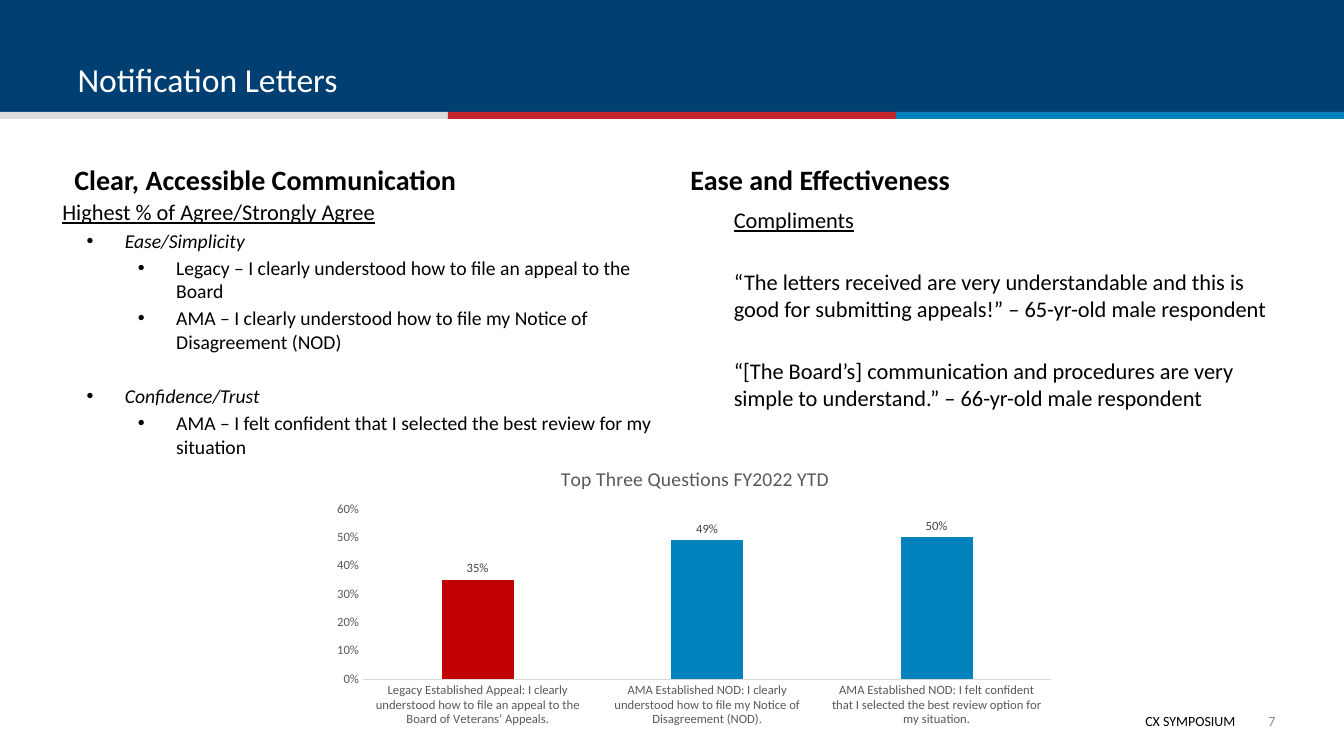
from lxml.etree import SubElement
from pptx import Presentation
from pptx.chart.data import CategoryChartData
from pptx.dml.color import RGBColor
from pptx.enum.chart import XL_CHART_TYPE, XL_LABEL_POSITION, XL_TICK_MARK
from pptx.enum.shapes import MSO_SHAPE
from pptx.enum.text import MSO_ANCHOR, PP_ALIGN
from pptx.oxml import parse_xml
from pptx.oxml.ns import nsdecls, qn
from pptx.util import Inches, Pt

COLOURS = {
    "navy": "003F72", "silver": "DBDCDE", "red": "C6262D", "blue": "0082BD",
    "crimson": "C00000", "black": "000000", "white": "FFFFFF", "number": "8C8C8C",
    "axis": "595959", "label": "404040", "rule": "D9D9D9",
}
RGB = {name: RGBColor.from_string(value) for name, value in COLOURS.items()}

presentation = Presentation()
presentation.slide_width = Inches(13.33)
presentation.slide_height = Inches(7.5)
slide = presentation.slides.add_slide(presentation.slide_layouts[6])


def share(left, top, width, height):
    across = presentation.slide_width / 100
    down = presentation.slide_height / 100
    return [int(length) for length in (left * across, top * down, width * across, height * down)]


def add_text(place, paragraphs, colour="black", inset=None, align=PP_ALIGN.LEFT, anchor=MSO_ANCHOR.TOP):
    frame = slide.shapes.add_textbox(*share(*place)).text_frame
    frame.word_wrap = True
    frame.vertical_anchor = anchor
    if inset is not None:
        for side in ("left", "top", "right", "bottom"):
            setattr(frame, f"margin_{side}", Inches(inset))
    for index, (text, indent, before, formats) in enumerate(paragraphs):
        paragraph = frame.add_paragraph() if index else frame.paragraphs[0]
        paragraph.alignment = align
        paragraph.space_before = Pt(before)
        run = paragraph.add_run()
        run.text = text
        for name, value in {"name": "Calibri", **formats}.items():
            setattr(run.font, name, value)
        run.font.color.rgb = RGB[colour]
        if indent:
            properties = paragraph._p.get_or_add_pPr()
            properties.set("marL", str(Inches(indent)))
            properties.set("indent", str(Inches(-0.38)))
            SubElement(properties, qn("a:buFont")).set("typeface", "Arial")
            SubElement(properties, qn("a:buChar")).set("char", "•")


third = 100 / 3
bands = [("navy", (0, 0, 100, 15.2))]
bands += [(colour, (column * third, 14.8, third, 0.93)) for column, colour in enumerate(("silver", "red", "blue"))]
for colour, place in bands:
    band = slide.shapes.add_shape(MSO_SHAPE.RECTANGLE, *share(*place))
    band.shadow.inherit = False
    band.fill.solid()
    band.fill.fore_color.rgb = RGB[colour]
    band.line.fill.background()

small = {"size": Pt(10)}
item = {"size": Pt(14)}
topic = {"size": Pt(14), "italic": True}
quote = {"size": Pt(16)}
lead = {"size": Pt(16), "underline": True}
heading = {"size": Pt(20), "bold": True}

add_text((5.03, 1.87, 90.02, 11.87), [("Notification Letters", 0, 0, {"size": Pt(24)})],
         colour="white", anchor=MSO_ANCHOR.BOTTOM)
for left, text in ((4.8, "Clear, Accessible Communication"), (50.64, "Ease and Effectiveness")):
    add_text((left, 17.33, 44.19, 9.33), [(text, 0, 4, heading)], anchor=MSO_ANCHOR.BOTTOM)

add_text((3.9, 25.6, 47.56, 64.8), [
    ("Highest % of Agree/Strongly Agree", 0, 2, lead),
    ("Ease/Simplicity", 0.62, 2.4, topic),
    ("Legacy – I clearly understood how to file an appeal to the Board", 1.13, 2.4, item),
    ("AMA – I clearly understood how to file my Notice of Disagreement (NOD)", 1.13, 2.4, item),
    ("Confidence/Trust", 0.62, 22.2, topic),
    ("AMA – I felt confident that I selected the best review for my situation", 1.13, 2.4, item),
])
add_text((53.86, 26.67, 41.26, 64.8), [
    ("Compliments", 0, 2, lead),
    ("“The letters received are very understandable and this is good for submitting appeals!”"
     " – 65-yr-old male respondent", 0, 25, quote),
    ("“[The Board’s] communication and procedures are very simple to understand.”"
     " – 66-yr-old male respondent", 0, 25, quote),
])
add_text((41.34, 93.6, 51.31, 3.6), [("CX SYMPOSIUM", 0, 0, small)], align=PP_ALIGN.RIGHT)
add_text((92.2, 92.67, 2.7, 5.33), [("7", 0, 0, small)], colour="number", inset=0,
         align=PP_ALIGN.RIGHT, anchor=MSO_ANCHOR.MIDDLE)

questions = CategoryChartData(number_format="0%")
questions.categories = [
    "Legacy Established Appeal: I clearly understood how to file an appeal to the Board of Veterans’ Appeals.",
    "AMA Established NOD: I clearly understood how to file my Notice of Disagreement (NOD).",
    "AMA Established NOD: I felt confident that I selected the best review option for my situation.",
]
questions.add_series("Series 1", (0.35, 0.49, 0.5))
chart = slide.shapes.add_chart(
    XL_CHART_TYPE.COLUMN_CLUSTERED, *share(24.01, 59.6, 55.44, 37.33), questions).chart
chart.has_legend = False
chart.has_title = True
chart.chart_title.include_in_layout = False
chart.chart_title.text_frame.text = "Top Three Questions FY2022 YTD"
title_font = chart.chart_title.text_frame.paragraphs[0].runs[0].font

plot = chart.plots[0]
plot.vary_by_categories = False
plot.gap_width = 219
plot.overlap = -27
plot.has_data_labels = True
labels = plot.data_labels
for name, value in {"show_value": True, "number_format": "0%", "number_format_is_linked": False,
                    "position": XL_LABEL_POSITION.OUTSIDE_END}.items():
    setattr(labels, name, value)

bars = plot.series[0]
for part, colour in ((bars, "blue"), (bars.points[0], "crimson")):
    part.format.fill.solid()
    part.format.fill.fore_color.rgb = RGB[colour]

for axis in (chart.category_axis, chart.value_axis):
    axis.major_tick_mark = axis.minor_tick_mark = XL_TICK_MARK.NONE
    axis.has_major_gridlines = False
chart.category_axis.format.line.color.rgb = RGB["rule"]
chart.category_axis.format.line.width = Pt(0.75)
value_axis = chart.value_axis
value_axis.format.line.fill.background()
for name, value in {"minimum_scale": 0, "maximum_scale": 0.6, "major_unit": 0.1}.items():
    setattr(value_axis, name, value)
value_axis.tick_labels.number_format = "0%"
value_axis.tick_labels.number_format_is_linked = False

for font, size, colour in (
    (chart.font, 10, "black"), (title_font, 14, "axis"), (labels.font, 9, "label"),
    (chart.category_axis.tick_labels.font, 9, "axis"), (value_axis.tick_labels.font, 9, "axis"),
):
    for name, value in {"name": "Calibri", "size": Pt(size), "bold": False}.items():
        setattr(font, name, value)
    font.color.rgb = RGB[colour]

plot_area = chart._chartSpace.chart.plotArea
for layout in plot_area.findall(qn("c:layout")):
    plot_area.remove(layout)
edges = {"xMode": "edge", "yMode": "edge", "x": 0.054, "y": 0.207, "w": 0.924, "h": 0.603}
settings = "".join(f'<c:{name} val="{value}"/>' for name, value in edges.items())
plot_area.insert(0, parse_xml(
    f'<c:layout {nsdecls("c")}><c:manualLayout><c:layoutTarget val="inner"/>{settings}</c:manualLayout></c:layout>'))

presentation.save("out.pptx")
